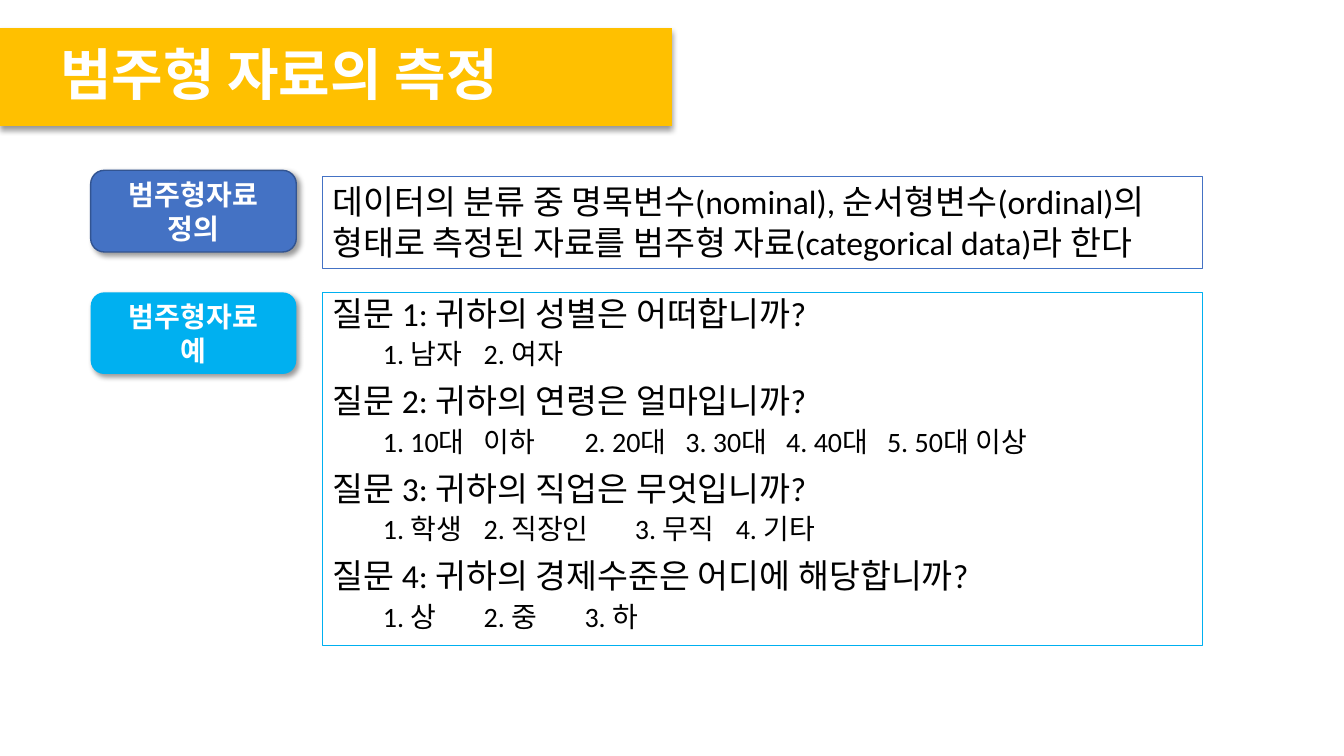
"""Build a slide on how categorical data is measured."""
from lxml.etree import SubElement
from pptx import Presentation
from pptx.dml.color import RGBColor
from pptx.enum.shapes import MSO_SHAPE
from pptx.enum.text import MSO_ANCHOR, PP_ALIGN
from pptx.oxml.ns import qn
from pptx.util import Inches, Pt

WHITE = RGBColor(0xFF, 0xFF, 0xFF)
BLACK = RGBColor(0x00, 0x00, 0x00)
GOLD = RGBColor(0xFF, 0xC0, 0x00)
BLUE = RGBColor(0x44, 0x72, 0xC4)
NAVY = RGBColor(0x32, 0x54, 0x91)
SKY = RGBColor(0x00, 0xB0, 0xF0)

SLIDE_WIDTH, SLIDE_HEIGHT = Inches(13.33), Inches(7.5)
TAG_LEFT, TAG_WIDTH, TAG_HEIGHT = 6.75, 15.3, 10.8
PANEL_LEFT, PANEL_WIDTH = 24, 65.5
DEFINITION_TOP, EXAMPLE_TOP = 22.53, 38.67
OPTION_INDENT = 0.5

DEFINITION = ("데이터의 분류 중 명목변수(nominal), 순서형변수(ordinal)의 형태로 "
              "측정된 자료를 범주형 자료(categorical data)라 한다")
QUESTIONS = [
    ("질문 1: 귀하의 성별은 어떠합니까?", "1. 남자\t2. 여자", [1.81]),
    ("질문 2: 귀하의 연령은 얼마입니까?",
     "1. 10대\t이하\t2. 20대\t3. 30대\t4. 40대\t5. 50대 이상",
     [1.62, 2.65, 4.15, 5.56, 6.82]),
    ("질문 3: 귀하의 직업은 무엇입니까?",
     "1. 학생\t2. 직장인\t3. 무직\t4. 기타", [1.66, 3.06, 4.29]),
    ("질문 4: 귀하의 경제수준은 어디에 해당합니까?",
     "1. 상\t2. 중\t3. 하", [1.71, 2.99]),
]


def add_box(slide, preset, left, top, width, height, fill=None, line=None, weight=0.75):
    """Add a shape placed by percentages of the slide's size."""
    box = slide.shapes.add_shape(
        preset, int(SLIDE_WIDTH * left / 100), int(SLIDE_HEIGHT * top / 100),
        int(SLIDE_WIDTH * width / 100), int(SLIDE_HEIGHT * height / 100))
    box.shadow.inherit = False
    if fill is None:
        box.fill.background()
    else:
        box.fill.solid()
        box.fill.fore_color.rgb = fill
    if line is None:
        box.line.fill.background()
    else:
        box.line.color.rgb = line
        box.line.width = Pt(weight)
    box.text_frame.word_wrap = True
    return box


def cast_shadow(box, degrees):
    """Give a box a soft black shadow falling in one direction."""
    effects = box.fill._xPr.find(qn("a:effectLst"))
    shadow = SubElement(effects, qn("a:outerShdw"), blurRad=str(Pt(4)),
                        dist=str(Pt(3)), dir=str(degrees * 60000),
                        algn="ctr", rotWithShape="0")
    black = SubElement(shadow, qn("a:srgbClr"), val=str(BLACK))
    SubElement(black, qn("a:alpha"), val="40000")


def style_paragraph(paragraph, size, color, bold=False, align=PP_ALIGN.LEFT):
    """Format the alignment and the runs of a paragraph."""
    paragraph.alignment = align
    for run in paragraph.runs:
        run.font.name = "Calibri"
        run.font.size = Pt(size)
        run.font.bold = bold
        run.font.color.rgb = color


def set_tabs(paragraph, stops, indent=0):
    """Indent a paragraph and set its left tab stops, in inches."""
    properties = paragraph._p.get_or_add_pPr()
    properties.set("marL", str(Inches(indent)))
    properties.set("indent", "0")
    tab_list = SubElement(properties, qn("a:tabLst"))
    for stop in stops:
        SubElement(tab_list, qn("a:tab"), pos=str(Inches(stop)), algn="l")


def add_title(slide, title):
    """Add the gold title banner."""
    banner = add_box(slide, MSO_SHAPE.RECTANGLE, 0, 3.73, 50, 12.93, GOLD)
    cast_shadow(banner, 90)
    banner.text_frame.text = f"\t{title}"
    banner.text_frame.vertical_anchor = MSO_ANCHOR.MIDDLE
    heading = banner.text_frame.paragraphs[0]
    heading.line_spacing = 0.9
    style_paragraph(heading, 40, WHITE, bold=True)
    set_tabs(heading, [1])


def add_tag(slide, top, label, fill, line=None):
    """Add a rounded label naming the panel beside it."""
    tag = add_box(slide, MSO_SHAPE.ROUNDED_RECTANGLE, TAG_LEFT, top,
                  TAG_WIDTH, TAG_HEIGHT, fill, line, 1)
    cast_shadow(tag, 45)
    tag.text_frame.text = label
    tag.text_frame.vertical_anchor = MSO_ANCHOR.MIDDLE
    for paragraph in tag.text_frame.paragraphs:
        style_paragraph(paragraph, 20, WHITE, True, PP_ALIGN.CENTER)


def add_panel(slide, top, height, line, lines):
    """Add an outlined panel filled with lines of text."""
    panel = add_box(slide, MSO_SHAPE.RECTANGLE, PANEL_LEFT, top,
                    PANEL_WIDTH, height, line=line)
    panel.text_frame.text = "\n".join(lines)
    panel.text_frame.vertical_anchor = MSO_ANCHOR.TOP
    for paragraph in panel.text_frame.paragraphs:
        style_paragraph(paragraph, 24, BLACK)
    return panel.text_frame.paragraphs


def add_questions(slide):
    """Add the panel of questions with their answer options."""
    lines = [text for question, options, _ in QUESTIONS for text in (question, options)]
    paragraphs = add_panel(slide, EXAMPLE_TOP, 46.67, SKY, lines)
    for paragraph in paragraphs:
        paragraph.line_spacing = 0.9
        paragraph.space_before = Pt(10)
    for options, (_, _, stops) in zip(paragraphs[1::2], QUESTIONS):
        options.level = 1
        options.space_before = Pt(5)
        style_paragraph(options, 20, BLACK)
        set_tabs(options, stops, OPTION_INDENT)


def main():
    """Build and save the slide."""
    deck = Presentation()
    deck.slide_width, deck.slide_height = SLIDE_WIDTH, SLIDE_HEIGHT
    slide = deck.slides.add_slide(deck.slide_layouts[6])
    add_title(slide, "범주형 자료의 측정")
    add_questions(slide)
    add_tag(slide, DEFINITION_TOP, "범주형자료\n정의", BLUE, NAVY)
    add_panel(slide, 23.33, 12.13, BLUE, [DEFINITION])
    add_tag(slide, EXAMPLE_TOP, "범주형자료\n예", SKY)
    deck.save("out.pptx")


if __name__ == "__main__":
    main()
